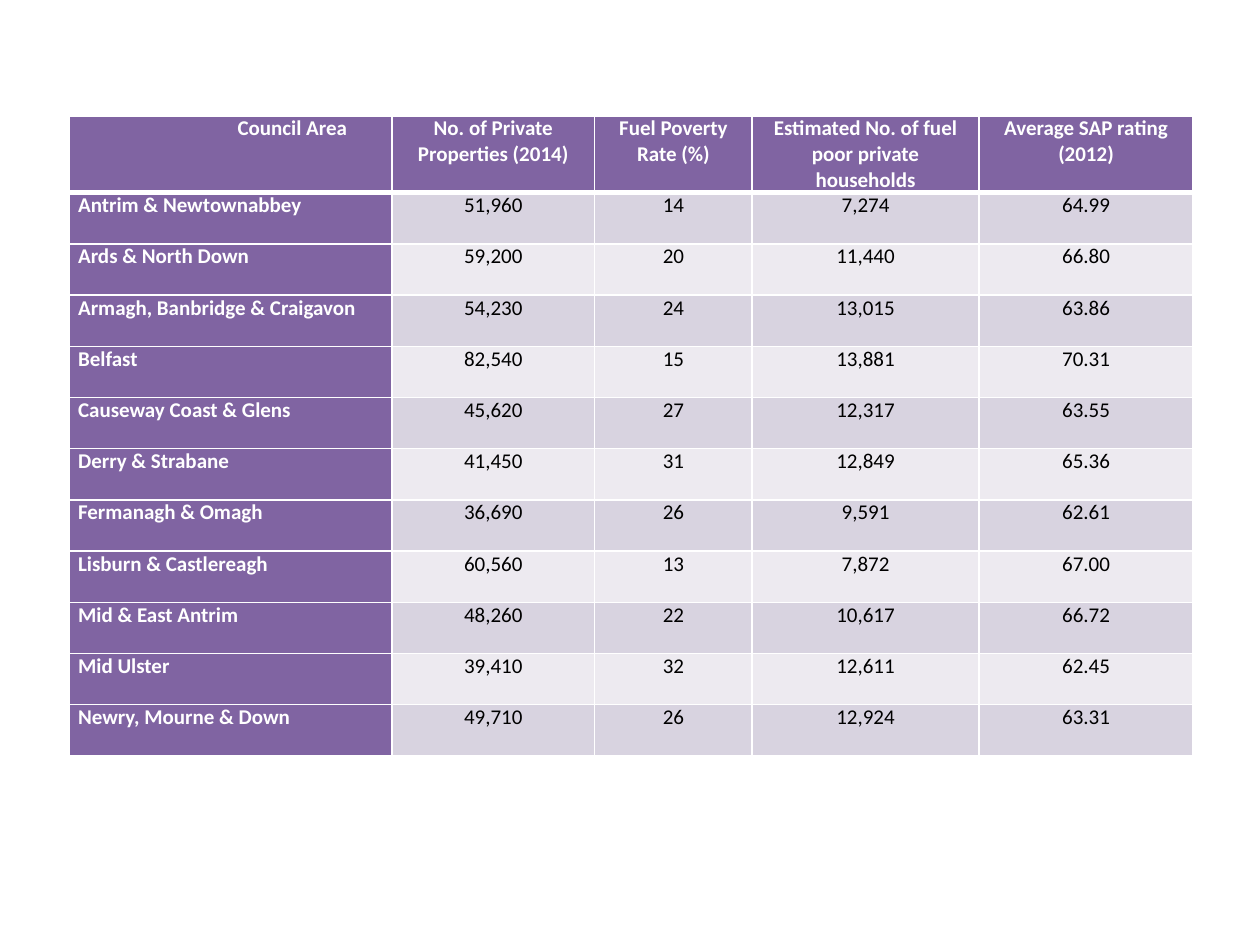
"""Build a slide with a table of fuel poverty by council area."""
from lxml import etree
from pptx import Presentation, util as u
from pptx.dml.color import RGBColor
from pptx.enum import text
from pptx.oxml import ns

PURPLE, WHITE, BLACK = "8064A2", "FFFFFF", "000000"
BANDS = ["D8D3E0", "EDEAF0"]
HEADINGS = ("Council Area", "No. of Private Properties (2014)", "Fuel Poverty Rate (%)",
            "Estimated No. of fuel poor private households", "Average SAP rating (2012)")
COUNCILS = [
    ("Antrim & Newtownabbey", "51,960", "14", "7,274", "64.99"),
    ("Ards & North Down", "59,200", "20", "11,440", "66.80"),
    ("Armagh, Banbridge & Craigavon", "54,230", "24", "13,015", "63.86"),
    ("Belfast", "82,540", "15", "13,881", "70.31"),
    ("Causeway Coast & Glens", "45,620", "27", "12,317", "63.55"),
    ("Derry & Strabane", "41,450", "31", "12,849", "65.36"),
    ("Fermanagh & Omagh", "36,690", "26", "9,591", "62.61"),
    ("Lisburn & Castlereagh", "60,560", "13", "7,872", "67.00"),
    ("Mid & East Antrim", "48,260", "22", "10,617", "66.72"),
    ("Mid Ulster", "39,410", "32", "12,611", "62.45"),
    ("Newry, Mourne & Down", "49,710", "26", "12,924", "63.31"),
]
WIDTHS = [2.56, 1.61, 1.25, 1.8, 1.7]
HEADER_HEIGHT, BODY_HEIGHT = 0.61, 4.47


def color(value):
    return RGBColor.from_string(value)


def write_cell(cell, words, *, fill, ink, bold, align, borders, left=0.07):
    cell.margin_left, cell.margin_right = u.Inches(left), u.Inches(0.07)
    cell.margin_top = cell.margin_bottom = 0
    properties = cell._tc.get_or_add_tcPr()
    for side, points in borders.items():
        line = etree.SubElement(properties, ns.qn(f"a:ln{side}"), w=str(u.Pt(points)))
        solid = etree.SubElement(line, ns.qn("a:solidFill"))
        etree.SubElement(solid, ns.qn("a:srgbClr"), val=WHITE)
    cell.fill.solid()
    cell.fill.fore_color.rgb = color(fill)
    para = cell.text_frame.paragraphs[0]
    para.alignment = align
    span = para.add_run()
    span.text = words
    span.font.name, span.font.size, span.font.bold = "Calibri", u.Pt(12), bold
    span.font.color.rgb = color(ink)


deck = Presentation()
deck.slide_width, deck.slide_height = u.Inches(10), u.Inches(7.5)
page = deck.slides.add_slide(deck.slide_layouts[6])
rows = [HEADINGS] + COUNCILS
table = page.shapes.add_table(
    len(rows), len(WIDTHS), u.Inches(0.55), u.Inches(0.92),
    u.Inches(sum(WIDTHS)), u.Inches(HEADER_HEIGHT + BODY_HEIGHT)).table
for column, width in zip(table.columns, WIDTHS):
    column.width = u.Inches(width)

for r, row in enumerate(rows):
    table.rows[r].height = u.Inches(BODY_HEIGHT / len(COUNCILS) if r else HEADER_HEIGHT)
    borders = {"L": 1, "R": 1, "T": 3 if r == 1 else 1, "B": 1 if r else 3}
    for c, words in enumerate(row):
        heading = r == 0 or c == 0
        write_cell(
            table.cell(r, c), words, borders=borders, bold=heading,
            fill=PURPLE if heading else BANDS[(r - 1) % 2],
            ink=WHITE if heading else BLACK,
            align=text.PP_ALIGN.JUSTIFY if r and c == 0 else text.PP_ALIGN.CENTER,
            left=1.05 if r == c == 0 else 0.07)

deck.save("out.pptx")
